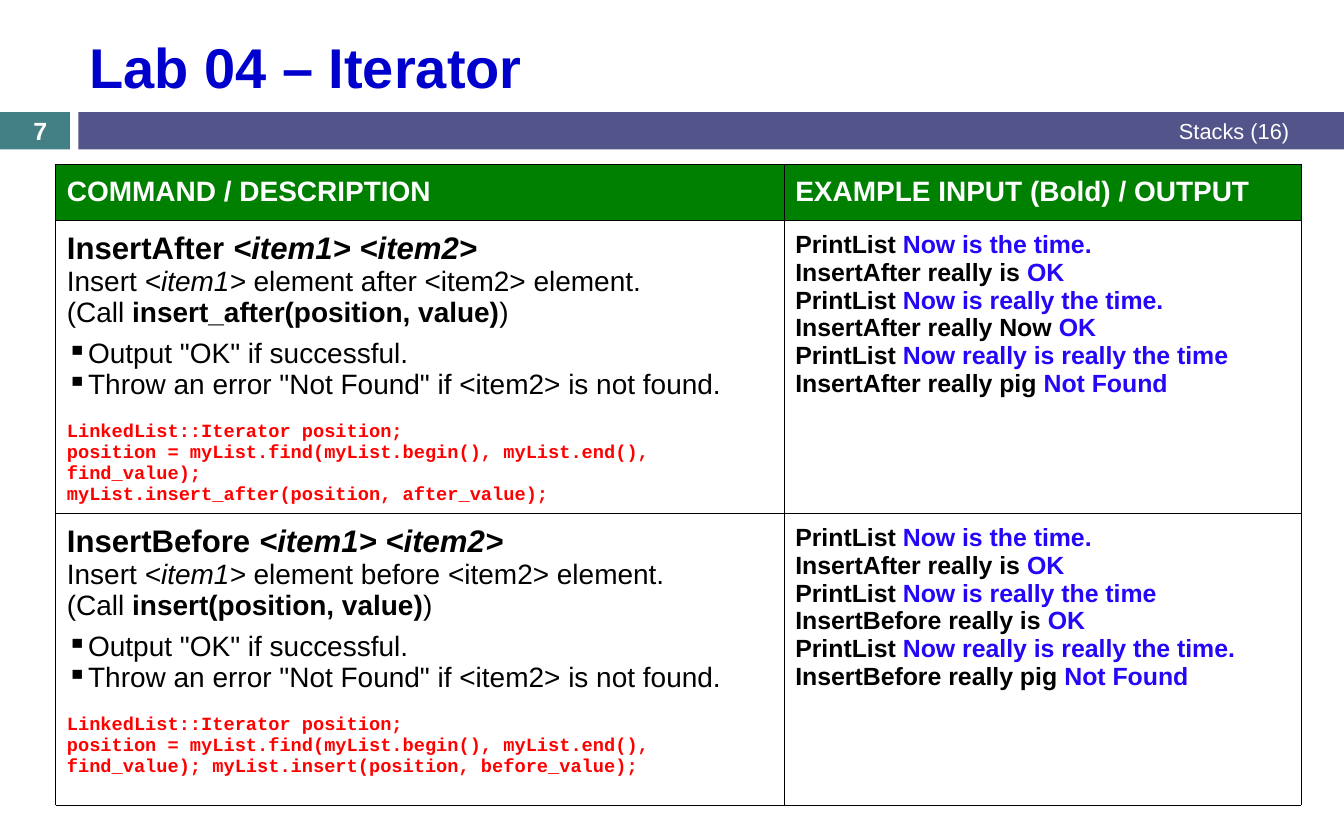
from lxml.etree import SubElement
from pptx import Presentation
from pptx.dml.color import RGBColor
from pptx.enum.shapes import MSO_SHAPE
from pptx.enum.text import MSO_ANCHOR, PP_ALIGN
from pptx.oxml.ns import qn
from pptx.util import Pt

TEAL = RGBColor(0x43, 0x80, 0x86)
INDIGO = RGBColor(0x53, 0x54, 0x8A)
TITLE_BLUE = RGBColor(0x00, 0x00, 0xCC)
OUTPUT_BLUE = RGBColor(0x24, 0x07, 0xF7)
GREEN = RGBColor(0x00, 0x80, 0x00)
RED = RGBColor(0xFF, 0x00, 0x00)
WHITE = RGBColor(0xFF, 0xFF, 0xFF)
BLACK = RGBColor(0x00, 0x00, 0x00)

HEADINGS = ["COMMAND / DESCRIPTION", "EXAMPLE INPUT (Bold) / OUTPUT"]
BULLETS = ['Output "OK" if successful.',
           'Throw an error "Not Found" if <item2> is not found.']
CODE_START = "LinkedList::Iterator position;"
FIND_CALL = "position = myList.find(myList.begin(), myList.end(), find_value);"
COMMON_EXAMPLES = [("PrintList ", "Now is the time."),
                   ("InsertAfter really is ", "OK")]

# command, where it inserts, call, code lines, examples, table top, row heights
COMMANDS = [
    ("InsertAfter", "after", "insert_after(position, value)",
     [CODE_START, FIND_CALL, "myList.insert_after(position, after_value);"],
     COMMON_EXAMPLES + [("PrintList ", "Now is really the time."),
                        ("InsertAfter really Now ", "OK"),
                        ("PrintList ", "Now really is really the time"),
                        ("InsertAfter really pig ", "Not Found")],
     105.6, [34.7, 189.6]),
    ("InsertBefore", "before", "insert(position, value)",
     [CODE_START, FIND_CALL + " myList.insert(position, before_value);"],
     COMMON_EXAMPLES + [("PrintList ", "Now is really the time"),
                        ("InsertBefore really is ", "OK"),
                        ("PrintList ", "Now really is really the time."),
                        ("InsertBefore really pig ", "Not Found")],
     329.9, [177.3]),
]


def add_run(paragraph, text, size, color=BLACK, bold=False, italic=False, font="Arial"):
    run = paragraph.add_run()
    run.text = text
    run.font.name = font
    run.font.size = Pt(size)
    run.font.bold = bold
    run.font.italic = italic
    run.font.color.rgb = color


def next_paragraph(frame):
    """Return the first paragraph while it is empty, then a new one each time."""
    first = frame.paragraphs[0]
    return frame.add_paragraph() if first.runs else first


presentation = Presentation()
presentation.slide_width = Pt(864)
presentation.slide_height = Pt(540)
slide = presentation.slides.add_slide(presentation.slide_layouts[6])

for left, width, color in [(0, 45, TEAL), (50.4, 813.6, INDIGO)]:
    band = slide.shapes.add_shape(MSO_SHAPE.RECTANGLE, Pt(left), Pt(72), Pt(width), Pt(24))
    band.shadow.inherit = False
    band.fill.solid()
    band.fill.fore_color.rgb = color
    band.line.fill.background()

for text, left, top, width, height, size, color, bold, align in [
    ("Lab 04 – Iterator", 50.4, 13.7, 785.5, 57.6, 36, TITLE_BLUE, True, PP_ALIGN.LEFT),
    ("Stacks (16)", 324, 71.5, 512, 25.2, 14, WHITE, False, PP_ALIGN.RIGHT),
    ("7", 0, 73, 51.8, 21.6, 16, WHITE, True, PP_ALIGN.CENTER),
]:
    frame = slide.shapes.add_textbox(Pt(left), Pt(top), Pt(width), Pt(height)).text_frame
    frame.word_wrap = True
    frame.vertical_anchor = MSO_ANCHOR.MIDDLE
    frame.paragraphs[0].alignment = align
    add_run(frame.paragraphs[0], text, size, color, bold)

for command, place, call, code, examples, top, heights in COMMANDS:
    table = slide.shapes.add_table(len(heights), 2, Pt(35.8), Pt(top),
                                   Pt(800.5), Pt(sum(heights))).table
    table.first_row = False
    table.horz_banding = False
    for column, width in zip(table.columns, [468.3, 332.2]):
        column.width = Pt(width)
    for row, height in zip(table.rows, heights):
        row.height = Pt(height)

    for cell in table.iter_cells():
        cell.margin_left = cell.margin_right = Pt(7.2)
        cell.margin_top = cell.margin_bottom = Pt(7.2)
        for side in ["a:lnL", "a:lnR", "a:lnT", "a:lnB"]:
            border = SubElement(cell._tc.get_or_add_tcPr(), qn(side), w=str(Pt(0.3)))
            SubElement(SubElement(border, qn("a:solidFill")), qn("a:srgbClr"), val=str(BLACK))
        cell.fill.solid()
        cell.fill.fore_color.rgb = WHITE

    if len(heights) == 2:
        for cell, heading in zip(table.rows[0].cells, HEADINGS):
            cell.fill.fore_color.rgb = GREEN
            cell.vertical_anchor = MSO_ANCHOR.MIDDLE
            add_run(cell.text_frame.paragraphs[0], heading, 18, WHITE, bold=True)

    description, example = [cell.text_frame for cell in table.rows[len(heights) - 1].cells]

    summary = next_paragraph(description)
    summary.space_after = Pt(6)
    add_run(summary, command + " ", 20, bold=True)
    add_run(summary, "<item1> <item2>", 20, bold=True, italic=True)
    summary.add_line_break()
    add_run(summary, "Insert ", 18)
    add_run(summary, "<item1>", 18, italic=True)
    add_run(summary, f" element {place} <item2> element.", 18)
    summary.add_line_break()
    add_run(summary, "(Call ", 18)
    add_run(summary, call, 18, bold=True)
    add_run(summary, ")", 18)

    for bullet in BULLETS:
        paragraph = next_paragraph(description)
        add_run(paragraph, bullet, 18)
        properties = paragraph._p.get_or_add_pPr()
        properties.set("marL", str(Pt(13.7)))
        properties.set("indent", str(-Pt(13.7)))
        SubElement(properties, qn("a:buChar"), char="▪")

    for line in code:
        paragraph = next_paragraph(description)
        if line == CODE_START:
            paragraph.space_before = Pt(13.4)
        add_run(paragraph, line, 12, RED, bold=True, font="Courier New")

    for entered, printed in examples:
        paragraph = next_paragraph(example)
        add_run(paragraph, entered, 16, bold=True)
        add_run(paragraph, printed, 16, OUTPUT_BLUE, bold=True)

presentation.save("out.pptx")
